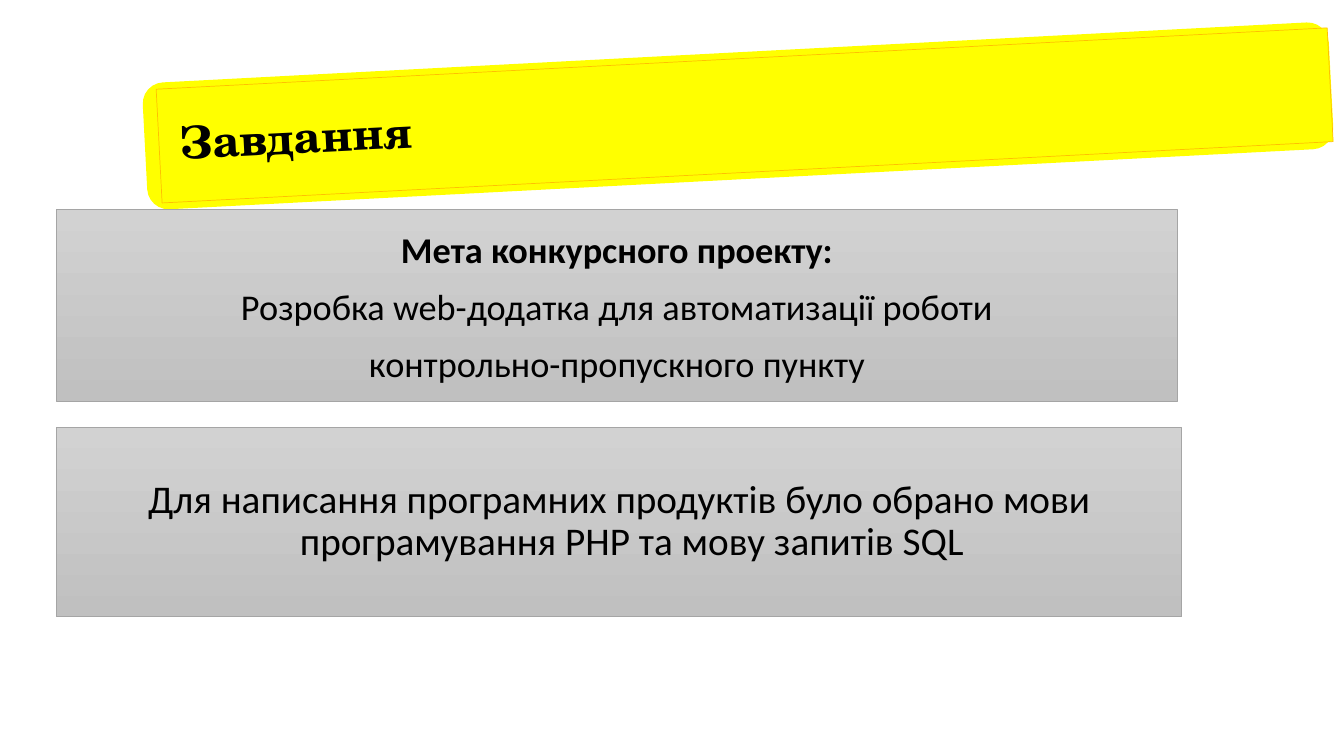
from dataclasses import dataclass

from pptx import Presentation
from pptx.dml.color import RGBColor
from pptx.enum.shapes import MSO_SHAPE
from pptx.enum.text import MSO_ANCHOR, PP_ALIGN
from pptx.util import Inches, Pt


@dataclass(frozen=True)
class Theme:
    banner: str = "FFFF00"
    banner_line: str = "FFC000"
    panel_top: str = "D2D2D2"
    panel_bottom: str = "C0C0C0"
    panel_line: str = "A5A5A5"
    text: str = "000000"
    title_font: str = "TeX Gyre Schola"
    body_font: str = "Calibri"
    title_size: float = 32
    goal_size: float = 25.9
    language_size: float = 28
    line_width: float = 0.5
    tilt: float = -3


class SlideBuilder:
    """Draws on one slide; places are percentages of its width and height."""

    def __init__(self, presentation, theme):
        self.theme = theme
        self.column = presentation.slide_width / 100
        self.row = presentation.slide_height / 100
        self.slide = presentation.slides.add_slide(presentation.slide_layouts[6])

    def shape(self, kind, left, top, width, height, line=None):
        shape = self.slide.shapes.add_shape(
            kind, round(left * self.column), round(top * self.row),
            round(width * self.column), round(height * self.row))
        shape.shadow.inherit = False
        if line:
            shape.line.color.rgb = RGBColor.from_string(line)
            shape.line.width = Pt(self.theme.line_width)
        else:
            shape.line.fill.background()
        return shape

    def set_text(self, shape, lines, font, size, spacing, align, anchor, bold_lines=0, hanging=0):
        frame = shape.text_frame
        frame.word_wrap = True
        frame.vertical_anchor = anchor
        frame.text = "\n".join(lines)
        for index, paragraph in enumerate(frame.paragraphs):
            if hanging:
                properties = paragraph._p.get_or_add_pPr()
                properties.set("marL", str(Inches(hanging)))
                properties.set("indent", str(-Inches(hanging)))
            paragraph.alignment = align
            paragraph.line_spacing = spacing
            paragraph.font.name = font
            paragraph.font.size = Pt(size)
            paragraph.font.bold = index < bold_lines
            paragraph.font.color.rgb = RGBColor.from_string(self.theme.text)

    def banner(self, kind, *place, line=None):
        shape = self.shape(kind, *place, line=line)
        shape.fill.solid()
        shape.fill.fore_color.rgb = RGBColor.from_string(self.theme.banner)
        shape.rotation = self.theme.tilt
        return shape

    def title(self, text, *place):
        shape = self.banner(MSO_SHAPE.RECTANGLE, *place, line=self.theme.banner_line)
        frame = shape.text_frame
        frame.margin_left = frame.margin_right = Inches(0.2)
        frame.margin_top = frame.margin_bottom = Inches(0.2)
        self.set_text(shape, [text], self.theme.title_font, self.theme.title_size, 0.9,
                      PP_ALIGN.LEFT, MSO_ANCHOR.MIDDLE, bold_lines=1)

    def panel(self, lines, *place, size, spacing, anchor, bold_lines=0):
        shape = self.shape(MSO_SHAPE.RECTANGLE, *place, line=self.theme.panel_line)
        shape.fill.gradient()
        shape.fill.gradient_angle = 270
        colors = self.theme.panel_top, self.theme.panel_bottom
        for stop, color in zip(shape.fill.gradient_stops, colors):
            stop.color.rgb = RGBColor.from_string(color)
        self.set_text(shape, lines, self.theme.body_font, size, spacing,
                      PP_ALIGN.CENTER, anchor, bold_lines, hanging=0.25)


def main():
    presentation = Presentation()
    presentation.slide_width = Inches(13.33)
    presentation.slide_height = Inches(7.5)
    theme = Theme()
    builder = SlideBuilder(presentation, theme)

    # Tilted title banner
    builder.banner(MSO_SHAPE.ROUNDED_RECTANGLE, 10.73, 6.93, 88.37, 16.8)
    builder.title("Завдання", 11.78, 7.73, 87.25, 15.07)

    # Project goal
    builder.panel(
        ["Мета конкурсного проекту:",
         "Розробка web-додатка для автоматизації роботи",
         "контрольно-пропускного пункту"],
        4.2, 27.73, 83.42, 25.33,
        size=theme.goal_size, spacing=1.3, anchor=MSO_ANCHOR.TOP, bold_lines=1)

    # Chosen languages
    builder.panel(
        ["Для написання програмних продуктів було обрано мови "
         "програмування PHP та мову запитів SQL"],
        4.2, 56.53, 83.72, 25.07,
        size=theme.language_size, spacing=0.9, anchor=MSO_ANCHOR.MIDDLE)

    presentation.save("out.pptx")


if __name__ == "__main__":
    main()
